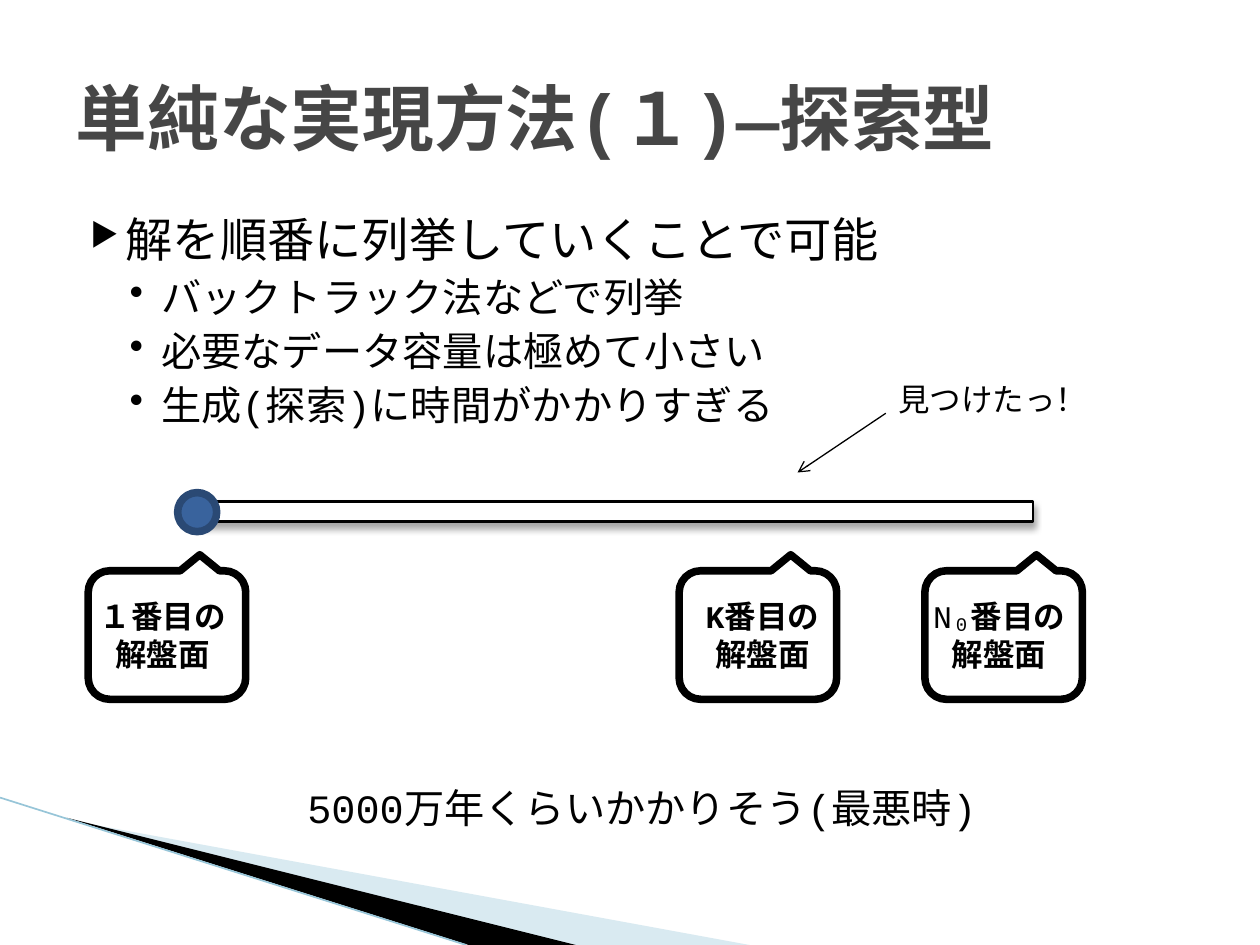
from dataclasses import dataclass

from lxml.etree import SubElement
from pptx import Presentation
from pptx.dml.color import RGBColor
from pptx.enum.shapes import MSO_CONNECTOR, MSO_SHAPE
from pptx.enum.text import MSO_ANCHOR, MSO_AUTO_SIZE, PP_ALIGN
from pptx.oxml.ns import qn
from pptx.slide import Slide
from pptx.util import Inches, Pt

COLORS = {
    "ink": "000000",
    "paper": "FFFFFF",
    "title": "464646",
    "swoosh": "A0CBDC",
    "edge": "97C5D8",
    "marker": "39639D",
    "marker_rim": "2A4974",
}


def rgb(name):
    return RGBColor.from_string(COLORS[name])


def add_xml(parent, tag, **attributes):
    return SubElement(parent, qn(tag), {key: str(value) for key, value in attributes.items()})


@dataclass
class SlideBuilder:
    """Draws styled elements on the current slide."""

    slide: Slide
    font: str = "Courier New"

    def style(self, paragraph, size, color="ink", bold=None):
        paragraph.font.name = self.font
        paragraph.font.size = Pt(size)
        paragraph.font.color.rgb = rgb(color)
        paragraph.font.bold = bold

    def title(self, text, box):
        title = self.slide.shapes.title
        title.left, title.top, title.width, title.height = map(Inches, box)
        frame = title.text_frame
        frame.text = text
        frame.auto_size = MSO_AUTO_SIZE.NONE
        frame.vertical_anchor = MSO_ANCHOR.MIDDLE
        paragraph = frame.paragraphs[0]
        paragraph.alignment = PP_ALIGN.LEFT
        self.style(paragraph, 41, "title", True)

    def text(self, lines, box, size, align=PP_ALIGN.LEFT, bold=None):
        frame = self.slide.shapes.add_textbox(*map(Inches, box)).text_frame
        frame.word_wrap = True
        frame.auto_size = MSO_AUTO_SIZE.SHAPE_TO_FIT_TEXT
        frame.text = "\n".join(lines)
        for paragraph in frame.paragraphs:
            paragraph.alignment = align
            self.style(paragraph, size, bold=bold)
        return frame

    def bullets(self, items, box):
        frame = self.slide.shapes.add_textbox(*map(Inches, box)).text_frame
        frame.word_wrap = True
        frame.text = "\n".join(text for _, text in items)
        levels = [("▶", 68, 0.4, -0.28, 27), ("•", 100, 0.68, -0.25, 23)]
        for index, (paragraph, (level, _)) in enumerate(zip(frame.paragraphs, items)):
            symbol, percent, margin, indent, size = levels[level]
            paragraph.level = level
            if index:
                paragraph.space_before = Pt(3.2)
            properties = paragraph._p.get_or_add_pPr()
            properties.set("marL", str(Inches(margin)))
            properties.set("indent", str(Inches(indent)))
            add_xml(properties, "a:buSzPct", val=percent * 1000)
            add_xml(properties, "a:buChar", char=symbol)
            self.style(paragraph, size)

    def shape(self, preset, box, line_width, fill="paper", line="ink"):
        shape = self.slide.shapes.add_shape(preset, *map(Inches, box))
        shape.shadow.inherit = False
        shape.fill.solid()
        shape.fill.fore_color.rgb = rgb(fill)
        shape.line.color.rgb = rgb(line)
        shape.line.width = Pt(line_width)
        return shape

    def bar(self, box):
        bar = self.shape(MSO_SHAPE.RECTANGLE, box, 1.5)
        effects = bar._element.spPr.find(qn("a:effectLst"))
        shadow = add_xml(effects, "a:outerShdw", blurRad=Pt(4), dist=Pt(3),
                         dir=90 * 60000, algn="ctr", rotWithShape=0)
        add_xml(add_xml(shadow, "a:srgbClr", val=COLORS["ink"]), "a:alpha", val=35000)

    def callout(self, left, label_left, lines):
        balloon = self.shape(MSO_SHAPE.ROUNDED_RECTANGULAR_CALLOUT, (left, 4.53, 1.25, 1.02), 4.33)
        balloon.rotation = 180
        return self.text(lines, (label_left, 4.69, 1.48, 0.71), 18, PP_ALIGN.CENTER, True)

    def line(self, start, end, width, color="ink", arrow=False):
        line = self.slide.shapes.add_connector(MSO_CONNECTOR.STRAIGHT, *map(Inches, start + end))
        line.line.color.rgb = rgb(color)
        line.line.width = Pt(width)
        if arrow:
            add_xml(line.line._get_or_add_ln(), "a:tailEnd", type="arrow")
        add_xml(line._element.spPr, "a:effectLst")

    def wedge(self, points, color, opacity=100):
        start, *rest = [(Inches(x), Inches(y)) for x, y in points]
        outline = self.slide.shapes.build_freeform(*start)
        outline.add_line_segments(rest)
        wedge = outline.convert_to_shape()
        wedge.shadow.inherit = False
        wedge.fill.solid()
        wedge.fill.fore_color.rgb = rgb(color)
        wedge.line.fill.background()
        if opacity < 100:
            fill_color = wedge._element.spPr.find(qn("a:solidFill"))[0]
            add_xml(fill_color, "a:alpha", val=opacity * 1000)


def main():
    presentation = Presentation()
    presentation.slide_width, presentation.slide_height = Inches(10), Inches(7.5)
    builder = SlideBuilder(presentation.slides.add_slide(presentation.slide_layouts[5]))

    builder.wedge([(0.55, 6.51), (5.95, 7.5), (4.56, 7.5)], "swoosh", 40)
    builder.wedge([(0.53, 6.49), (4.57, 7.5), (3.72, 7.5)], "ink")
    builder.line((0, 6.33), (3.7, 7.5), 0.95, "edge")

    builder.title("単純な実現方法(１)―探索型", (0.5, 0.3, 9, 1.25))
    builder.bullets([
        (0, "解を順番に列挙していくことで可能"),
        (1, "バックトラック法などで列挙"),
        (1, "必要なデータ容量は極めて小さい"),
        (1, "生成(探索)に時間がかかりすぎる"),
    ], (0.5, 1.62, 9, 2.05))

    builder.bar((1.56, 3.98, 6.64, 0.16))
    builder.shape(MSO_SHAPE.OVAL, (1.41, 3.91, 0.31, 0.31), 4.33, "marker", "marker_rim")

    board = "解盤面"
    builder.callout(0.7, 0.55, ["１番目の", board])
    builder.callout(5.39, 5.31, ["K番目の", board])
    last_label = builder.callout(7.34, 7.19, ["", board])
    for text, bold in (("N₀", False), ("番目の", True)):
        run = last_label.paragraphs[0].add_run()
        run.text = text
        run.font.bold = bold

    builder.text(["5000万年くらいかかりそう(最悪時)"], (2.34, 6.17, 6.72, 0.49), 23)
    builder.line((7.03, 3.28), (6.33, 3.75), 0.75, arrow=True)
    builder.text(["見つけたっ！"], (7.03, 2.97, 1.8, 0.4), 18)

    presentation.save("out.pptx")


if __name__ == "__main__":
    main()
